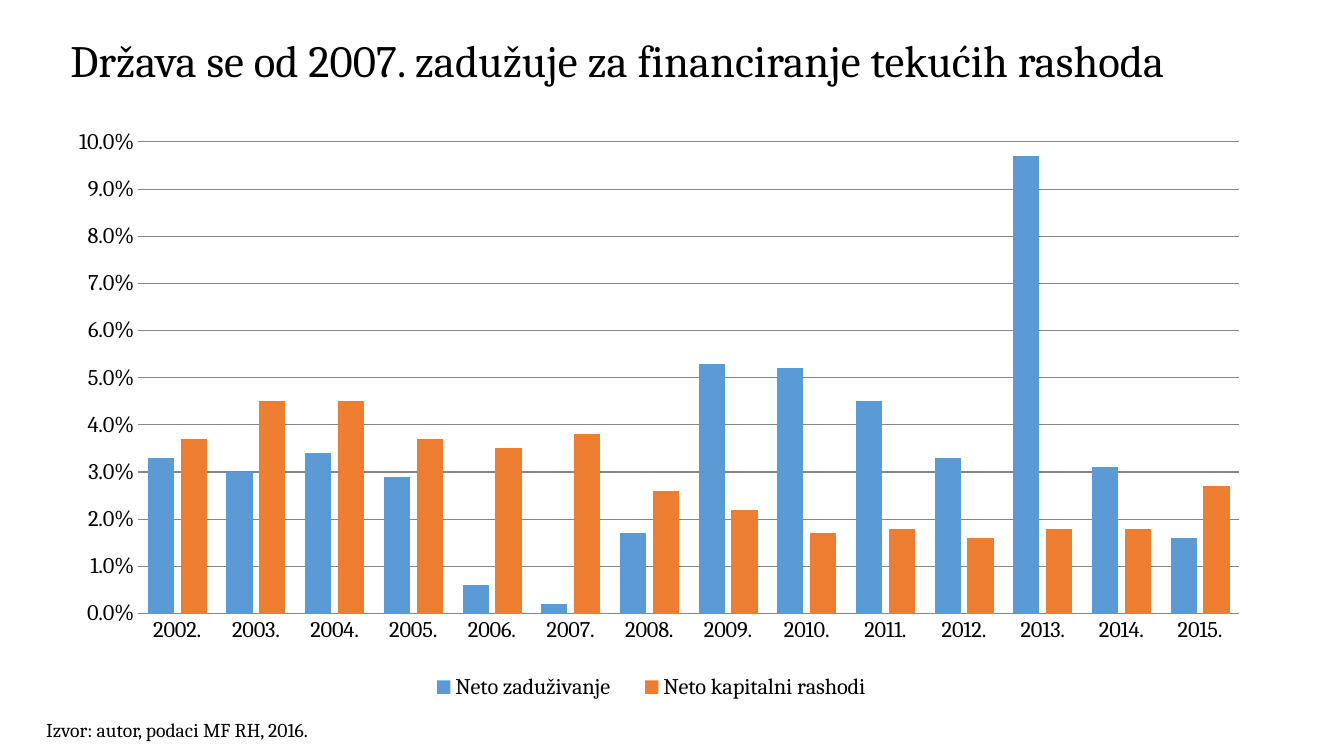
from lxml import etree
from pptx import Presentation
from pptx import util as u
from pptx.chart.data import CategoryChartData
from pptx.dml.color import RGBColor
from pptx.enum import chart as ch, text
from pptx.oxml import ns

FONT, BLACK, GRID = "Cambria", "000000", "868686"
WIDTH, HEIGHT = 13.33, 7.5
TITLE = "Država se od 2007. zadužuje za financiranje tekućih rashoda"
SOURCE = "Izvor: autor, podaci MF RH, 2016."
YEARS = range(2002, 2016)
SERIES = [
    ("Neto zaduživanje", "5B9BD5",
     [3.3, 3.0, 3.4, 2.9, 0.6, 0.2, 1.7, 5.3, 5.2, 4.5, 3.3, 9.7, 3.1, 1.6]),
    ("Neto kapitalni rashodi", "ED7D31",
     [3.7, 4.5, 4.5, 3.7, 3.5, 3.8, 2.6, 2.2, 1.7, 1.8, 1.6, 1.8, 1.8, 2.7]),
]
TITLE_BOX = (0.6, 0.04, 12.12, 1.17)
CHART_BOX = (0.47, 1.21, 11.98, 6.03)
SOURCE_BOX = (0.36, 7.07, 4.42, 0.34)
PLOT_SHARE = (0.075, 0.033, 0.912, 0.776)
LEGEND_SHARE = (0.3, 0.9, 0.4, 0.06)


def rgb(color):
    """Turn a hex string into a colour."""
    return RGBColor.from_string(color)


def set_font(font, size):
    """Apply the slide's typeface and text colour."""
    font.name, font.size, font.color.rgb = FONT, u.Pt(size), rgb(BLACK)


def add_text(slide, words, box, size, anchor=text.MSO_ANCHOR.TOP, spacing=1.0):
    """Add a one-paragraph text box."""
    tf = slide.shapes.add_textbox(*map(u.Inches, box)).text_frame
    tf.word_wrap, tf.vertical_anchor = True, anchor
    p = tf.paragraphs[0]
    p.line_spacing = spacing
    r = p.add_run()
    r.text = words
    set_font(r.font, size)


def make_layout(share, inner=False):
    """Build a manual chart layout from shares of the chart's size."""
    layout = etree.Element(ns.qn("c:layout"))
    manual = etree.SubElement(layout, ns.qn("c:manualLayout"))
    items = [("layoutTarget", "inner")] if inner else []
    items += [("xMode", "edge"), ("yMode", "edge"), *zip("xywh", share)]
    for tag, value in items:
        etree.SubElement(manual, ns.qn("c:" + tag)).set("val", str(value))
    return layout


def add_columns(slide):
    """Add the clustered column chart."""
    data = CategoryChartData(number_format="0.0%")
    data.categories = [f"{year}." for year in YEARS]
    for name, _, percents in SERIES:
        data.add_series(name, [round(v / 100, 3) for v in percents])
    chart = slide.shapes.add_chart(ch.XL_CHART_TYPE.COLUMN_CLUSTERED,
                                   *map(u.Inches, CHART_BOX), data).chart
    set_font(chart.font, 16)
    chart.has_title = False

    plot = chart.plots[0]
    plot.gap_width, plot.overlap, plot.vary_by_categories = 75, -25, False
    for series, (_, color, _) in zip(plot.series, SERIES):
        series.format.fill.solid()
        series.format.fill.fore_color.rgb = rgb(color)

    years, shares = chart.category_axis, chart.value_axis
    for axis in (years, shares):
        axis.major_tick_mark = axis.minor_tick_mark = ch.XL_TICK_MARK.NONE
    shares.minimum_scale, shares.maximum_scale, shares.major_unit = 0, 0.1, 0.01
    shares.tick_labels.number_format = "0.0%"
    shares.tick_labels.number_format_is_linked = False
    shares.format.line.fill.background()
    shares.has_major_gridlines = True
    for line in (years.format.line, shares.major_gridlines.format.line):
        line.color.rgb, line.width = rgb(GRID), u.Pt(0.75)

    chart.has_legend = True
    legend = chart.legend
    legend.position, legend.include_in_layout = ch.XL_LEGEND_POSITION.BOTTOM, False
    area = chart._chartSpace.chart.plotArea
    for old in area.findall(ns.qn("c:layout")):
        area.remove(old)
    area.insert(0, make_layout(PLOT_SHARE, inner=True))
    root = legend._element
    for old in root.findall(ns.qn("c:layout")):
        root.remove(old)
    root.find(ns.qn("c:legendPos")).addnext(make_layout(LEGEND_SHARE))


def main():
    """Build and save the slide."""
    prs = Presentation()
    prs.slide_width, prs.slide_height = u.Inches(WIDTH), u.Inches(HEIGHT)
    slide = prs.slides.add_slide(prs.slide_layouts[6])
    add_text(slide, TITLE, TITLE_BOX, 32, text.MSO_ANCHOR.MIDDLE, 0.9)
    add_columns(slide)
    add_text(slide, SOURCE, SOURCE_BOX, 14)
    prs.save("out.pptx")


if __name__ == "__main__":
    main()
